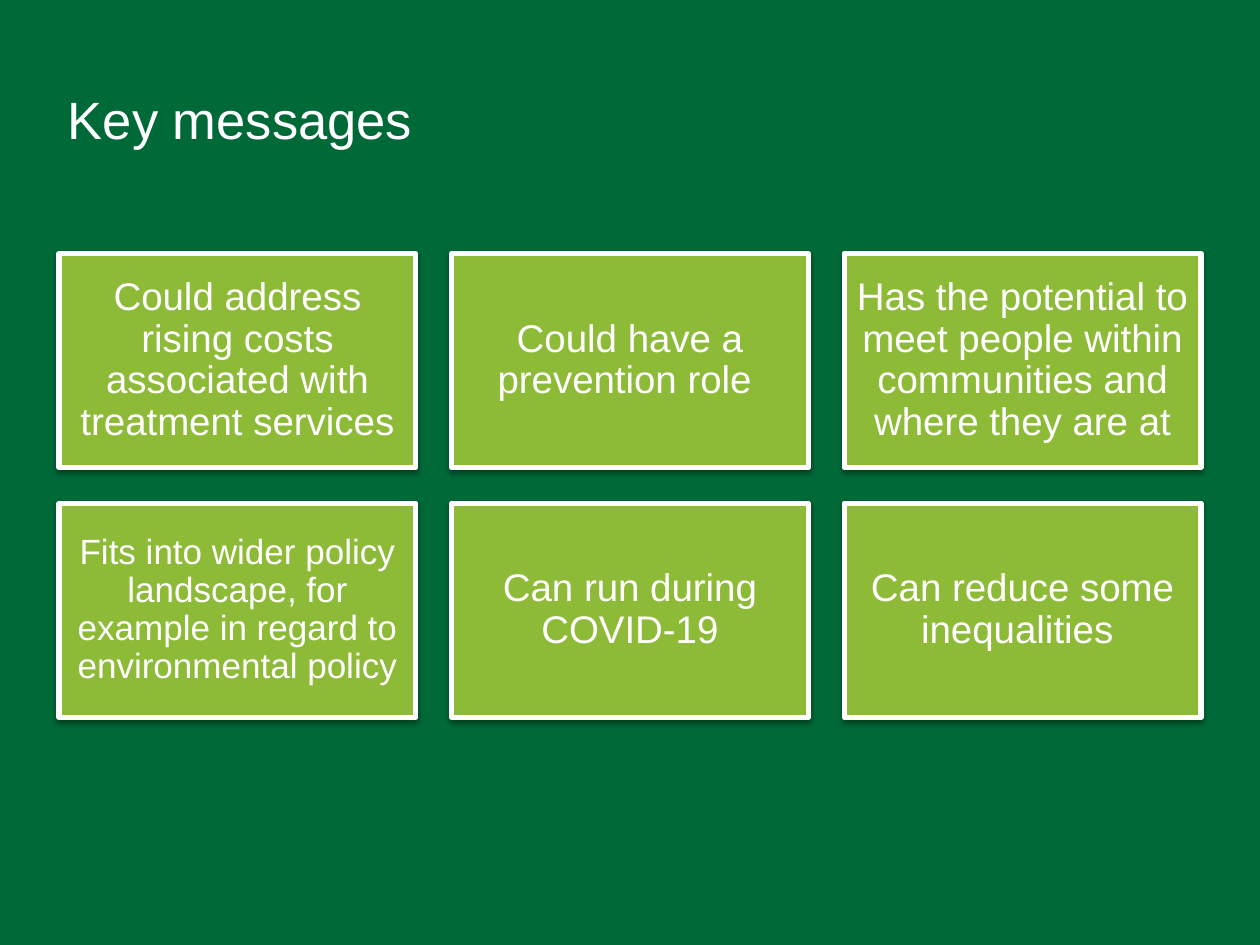
from lxml.etree import SubElement
from pptx import Presentation
from pptx.dml.color import RGBColor
from pptx.enum.shapes import MSO_SHAPE
from pptx.enum.text import MSO_ANCHOR, PP_ALIGN
from pptx.oxml.ns import qn
from pptx.util import Cm, Pt

GREEN, LIME, WHITE = "006938", "8DBB37", "FFFFFF"
MESSAGES = [
    ("Could address rising costs associated with treatment services", 22),
    ("Could have a prevention role ", 22),
    ("Has the potential to meet people within communities and where they are at", 22),
    ("Fits into wider policy landscape, for example in regard to environmental policy", 20),
    ("Can run during COVID-19", 22),
    ("Can reduce some inequalities ", 22),
]


def paint(color_format, color):
    """Give a fill or font colour a hex value."""
    color_format.rgb = RGBColor.from_string(color)


def style_text(p, size, align, spacing):
    """Format one paragraph."""
    p.alignment, p.line_spacing = align, spacing
    p.font.name, p.font.size = "Arial", Pt(size)
    paint(p.font.color, WHITE)


def set_margins(tf, x, y):
    """Set equal side margins and equal top and bottom margins in cm."""
    tf.margin_left = tf.margin_right = Cm(x)
    tf.margin_top = tf.margin_bottom = Cm(y)


def add_shadow(sp):
    """Add a soft shadow that falls straight down."""
    sp.shadow.inherit = False
    effects = sp._element.spPr.find(qn("a:effectLst"))
    shadow = SubElement(effects, qn("a:outerShdw"), blurRad=str(Pt(3.1)),
                        dist=str(Pt(1.6)), dir="5400000", rotWithShape="0")
    black = SubElement(shadow, qn("a:srgbClr"), val="000000")
    SubElement(black, qn("a:alpha"), val="38000")


def add_title(slide, text, left, top, width, height):
    """Place the title placeholder in its box."""
    sp = slide.shapes.title
    sp.left, sp.top, sp.width, sp.height = Cm(left), Cm(top), Cm(width), Cm(height)
    tf = sp.text_frame
    tf.text = text
    tf.vertical_anchor = MSO_ANCHOR.TOP
    set_margins(tf, 0.18, 0.23)
    style_text(tf.paragraphs[0], 30, PP_ALIGN.LEFT, Pt(30))


def add_card(slide, text, size, left, top, width, height):
    """Draw one message card."""
    sp = slide.shapes.add_shape(MSO_SHAPE.RECTANGLE, Cm(left), Cm(top),
                                Cm(width), Cm(height))
    sp.fill.solid()
    paint(sp.fill.fore_color, LIME)
    sp.line.width = Pt(3)
    paint(sp.line.color, WHITE)
    add_shadow(sp)
    tf = sp.text_frame
    tf.text = text
    tf.word_wrap = True
    tf.vertical_anchor = MSO_ANCHOR.MIDDLE
    margin = size * 0.01
    set_margins(tf, margin, margin)
    style_text(tf.paragraphs[0], size, PP_ALIGN.CENTER, 0.9)


def add_card_grid(slide, messages, left, top, width, height, cols=3, gap=0.72):
    """Lay the message cards out in equal rows and columns."""
    rows = -(-len(messages) // cols)
    w = (width - gap * (cols - 1)) / cols
    h = (height - gap * (rows - 1)) / rows
    for i, (text, size) in enumerate(messages):
        row, col = divmod(i, cols)
        add_card(slide, text, size, left + col * (w + gap), top + row * (h + gap), w, h)


def main():
    """Build and save the slide."""
    prs = Presentation()
    prs.slide_width, prs.slide_height = Cm(25.4), Cm(19.05)
    slide = prs.slides.add_slide(prs.slide_layouts[5])
    slide.background.fill.solid()
    paint(slide.background.fill.fore_color, GREEN)
    add_title(slide, "Key messages", 1.19, 1.73, 23.02, 2.87)
    add_card_grid(slide, MESSAGES, 1.19, 5.11, 23.02, 9.35)
    prs.save("out.pptx")


if __name__ == "__main__":
    main()
